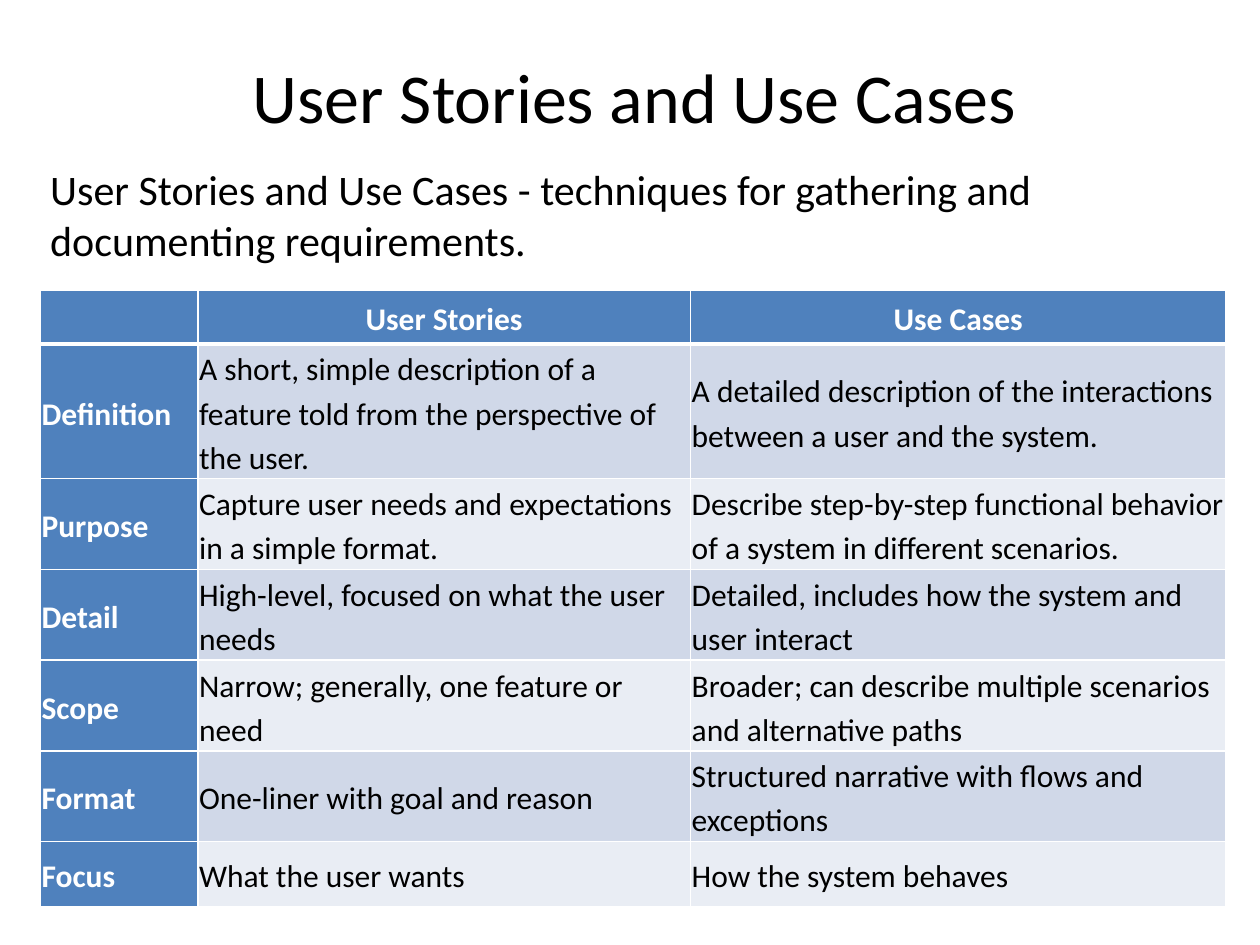
"""Build a slide that compares user stories with use cases in a table."""
from dataclasses import dataclass

from lxml import etree
from pptx import Presentation
from pptx.dml.color import RGBColor
from pptx.enum.text import MSO_ANCHOR, PP_ALIGN
from pptx.oxml.ns import qn
from pptx.slide import Slide
from pptx.table import _Cell
from pptx.text.text import TextFrame
from pptx.util import Inches, Pt

TOP, MIDDLE = MSO_ANCHOR.TOP, MSO_ANCHOR.MIDDLE
LEFT, CENTER = PP_ALIGN.LEFT, PP_ALIGN.CENTER
BLACK = RGBColor(0x00, 0x00, 0x00)
WHITE = RGBColor(0xFF, 0xFF, 0xFF)
BLUE = RGBColor(0x4F, 0x81, 0xBD)
BANDS = (RGBColor(0xD0, 0xD8, 0xE8), RGBColor(0xE9, 0xED, 0xF4))
FONT = "Calibri"
THIN, THICK = Pt(1), Pt(3)
SIDES = ("margin_left", "margin_top", "margin_right", "margin_bottom")
TIGHT = {side: Inches(0.01) for side in SIDES}
WIDTHS = (1.25, 3.91, 4.25)


@dataclass
class Label:
    text: str
    box: tuple[float, float, float, float]
    size: int
    align: PP_ALIGN
    anchor: MSO_ANCHOR
    before: float = 0


@dataclass
class Row:
    height: float
    cells: tuple[str, str, str]


LABELS = (
    Label("User Stories and Use Cases", (0.41, 0.13, 9.25, 1.25), 40, CENTER, MIDDLE),
    Label("User Stories and Use Cases - techniques for gathering and documenting requirements.",
          (0.3, 1.25, 9.09, 5.67), 24, LEFT, TOP, 4.8),
)
ROWS = (
    Row(0.43, ("", "User Stories", "Use Cases")),
    Row(1.07, ("Definition",
               "A short, simple description of a feature told from the perspective of the user.",
               "A detailed description of the interactions between a user and the system.")),
    Row(0.72, ("Purpose",
               "Capture user needs and expectations in a simple format.",
               "Describe step-by-step functional behavior of a system in different scenarios.")),
    Row(0.72, ("Detail",
               "High-level, focused on what the user needs",
               "Detailed, includes how the system and user interact")),
    Row(0.72, ("Scope",
               "Narrow; generally, one feature or need",
               "Broader; can describe multiple scenarios and alternative paths")),
    Row(0.72, ("Format",
               "One-liner with goal and reason",
               "Structured narrative with flows and exceptions")),
    Row(0.52, ("Focus", "What the user wants", "How the system behaves")),
)


def apply(target: object, values: dict) -> None:
    """Set each named value on the target."""
    for name, value in values.items():
        setattr(target, name, value)


def write(frame: TextFrame, text: str, font: dict, para: dict) -> None:
    """Write one styled paragraph into a text frame."""
    line = frame.paragraphs[0]
    apply(line, para)
    run = line.add_run()
    run.text = text
    color = font.pop("color")
    apply(run.font, {"name": FONT, **font})
    run.font.color.rgb = color


def add_label(slide: Slide, label: Label) -> None:
    """Add a text box for the label."""
    frame = slide.shapes.add_textbox(*map(Inches, label.box)).text_frame
    apply(frame, {"word_wrap": True, "vertical_anchor": label.anchor})
    write(frame, label.text, {"size": Pt(label.size), "color": BLACK},
          {"alignment": label.align, "space_before": Pt(label.before)})


def add_edges(cell: _Cell, row: int) -> None:
    """Draw white borders, with a thick rule below the header."""
    props = cell._tc.get_or_add_tcPr()
    thick = {(0, "B"), (1, "T")}
    for side in "LRTB":
        width = THICK if (row, side) in thick else THIN
        edge = etree.SubElement(props, qn(f"a:ln{side}"), w=str(width))
        fill = etree.SubElement(edge, qn("a:solidFill"))
        etree.SubElement(fill, qn("a:srgbClr"), val=str(WHITE))


def fill_cell(cell: _Cell, text: str, row: int, col: int) -> None:
    """Style a cell by its place and write its text."""
    head = row == 0 or col == 0
    add_edges(cell, row)
    cell.fill.solid()
    cell.fill.fore_color.rgb = BLUE if head else BANDS[(row - 1) % 2]
    if text:
        apply(cell, {"vertical_anchor": MIDDLE, **TIGHT})
        write(cell.text_frame, text,
              {"size": Pt(18), "bold": head, "color": WHITE if head else BLACK},
              {"alignment": CENTER if row == 0 else LEFT,
               "line_spacing": 1.15, "space_after": Pt(8)})


def add_grid(slide: Slide) -> None:
    """Add the table that compares both methods."""
    size = (sum(WIDTHS), sum(row.height for row in ROWS))
    table = slide.shapes.add_table(len(ROWS), len(WIDTHS),
                                   *map(Inches, (0.32, 2.3, *size))).table
    table.first_col = True
    for col, width in zip(table.columns, WIDTHS):
        col.width = Inches(width)
    for r, row in enumerate(ROWS):
        table.rows[r].height = Inches(row.height)
        for c, text in enumerate(row.cells):
            fill_cell(table.cell(r, c), text, r, c)


def main() -> None:
    """Build and save the slide."""
    deck = Presentation()
    apply(deck, {"slide_width": Inches(10), "slide_height": Inches(7.5)})
    slide = deck.slides.add_slide(deck.slide_layouts[6])
    for label in LABELS:
        add_label(slide, label)
    add_grid(slide)
    deck.save("out.pptx")


if __name__ == "__main__":
    main()
